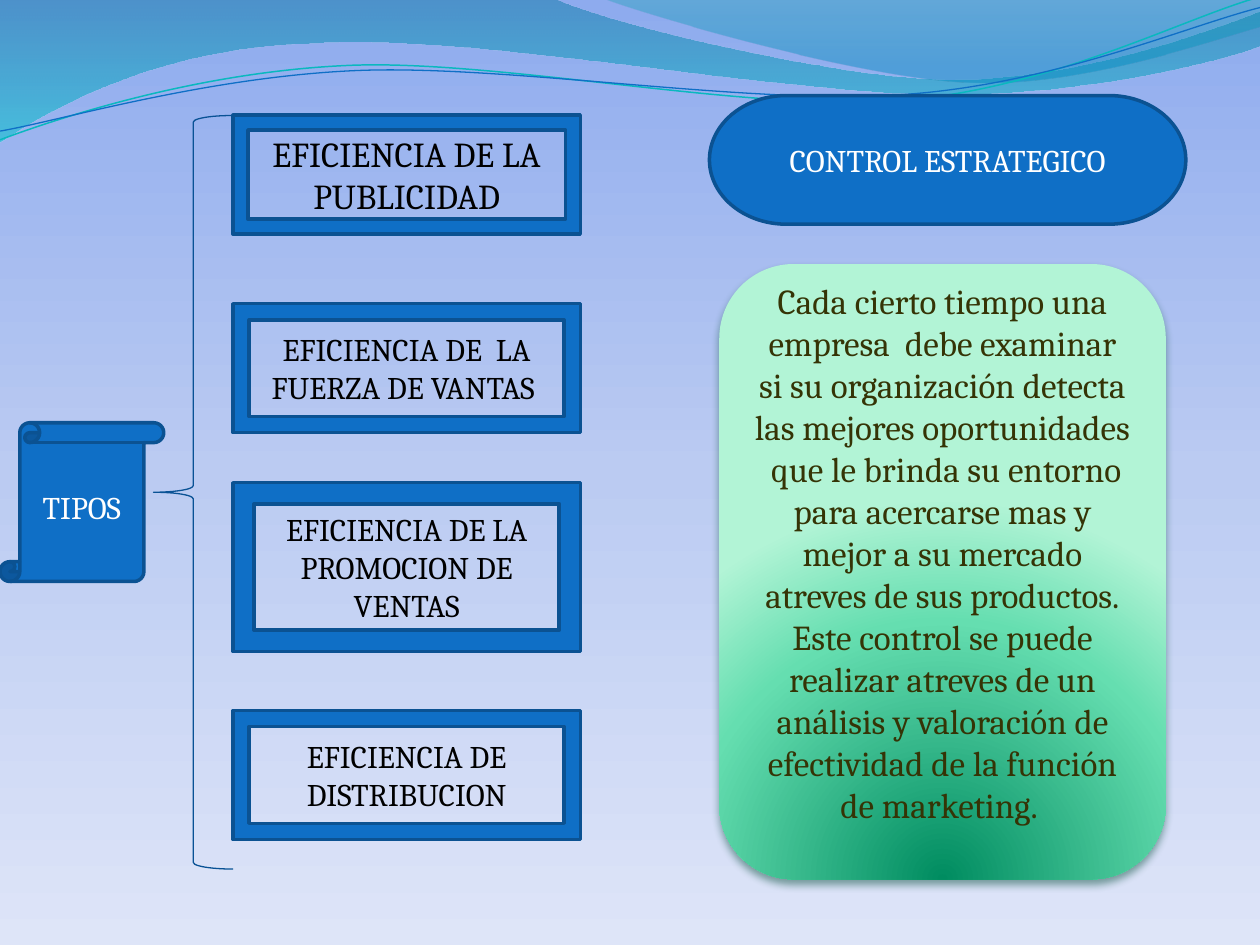
from lxml import etree
from pptx import Presentation
from pptx import util as u
from pptx.dml.color import RGBColor
from pptx.enum import shapes, text
from pptx.oxml import ns

FONT = "Cambria"
BLUE, DARK_BLUE, BLACK, WHITE, OLIVE = "0F6FC6", "0B5292", "000000", "FFFFFF", "353406"

BACKGROUND = [(0, "8EABEE", 100), (50, "BBCBF2", 100), (100, "DEE5F8", 100)]
GREEN = [(0, "008C60", 100), (68, "65DEB0", 100), (100, "B2F4D6", 100)]

WAVES = [
    ([[(0, 0)],
      [(316.8, -0.7)],
      [(342.7, 12.2), (478.1, 45.4), (545.8, 45.4)],
      [(614.2, 45.4), (689.8, 18.7), (720, 6.5)],
      [(720.7, 25.9)],
      [(707.8, 31.7), (626.4, 54.7), (537.1, 54)],
      [(446.4, 54), (275, 20.2), (185, 24.5)],
      [(92.9, 25.9), (33.1, 59.8), (-0.7, 81.4)]],
     [(0, "0074A1", 45), (100, "00C6CF", 55)]),
    ([[(344.9, -0.7)],
      [(366.5, 7.9), (491, 44.6), (553.7, 46.8)],
      [(616.3, 49.7), (691.9, 23), (720, 15.1)],
      [(720, 0)]],
     [(0, "00A1A9", 30), (80, "008BBF", 45)]),
]
WAVE_LINES = [
    ([[(0, 79.9)],
      [(34.6, 67), (113.8, 41), (199.4, 37.4)],
      [(284.4, 33.8), (427, 64.1), (513.4, 57.6)],
      [(599.8, 51.1), (675.4, 10.8), (718.6, -1.4)]], "0AB8BF", 0.85),
    ([[(0, 74.9)],
      [(33.8, 69.1), (118.1, 43.9), (203.8, 40.3)],
      [(290.2, 36.7), (429.8, 60.5), (516.2, 54)],
      [(601.9, 48.2), (677.5, 15.1), (720, 4.3)]], BLUE, 0.75),
]

FRAME_LEFT, FRAME_WIDTH = 133.2, 198.4
FRAMES = [
    ("EFICIENCIA DE LA PUBLICIDAD", 65.8, 68, 20),
    ("EFICIENCIA DE  LA FUERZA DE VANTAS ", 173.6, 73.7, 18),
    ("EFICIENCIA DE LA PROMOCION DE VENTAS", 275.8, 96.4, 18),
    ("EFICIENCIA DE DISTRIBUCION", 406, 73.7, 18),
]
LABELS = [
    ("TIPOS", shapes.MSO_SHAPE.VERTICAL_SCROLL, (0, 241.6, 93.6, 90.7)),
    ("CONTROL ESTRATEGICO", shapes.MSO_SHAPE.FLOWCHART_TERMINATOR, (405.4, 54.6, 272.2, 73.5)),
]
EXPLANATION = [
    "Cada cierto tiempo una empresa  debe examinar si su organización detecta las mejores "
    "oportunidades  que le brinda su entorno para acercarse mas y mejor a su mercado "
    "atreves de sus productos.",
    "Este control se puede realizar atreves de un análisis y valoración de efectividad "
    "de la función de marketing. ",
]


def color(value):
    return RGBColor.from_string(value)


def add_child(parent, tag, **attributes):
    return etree.SubElement(parent, ns.qn(tag), {k: str(v) for k, v in attributes.items()})


def add_color(parent, value, opacity):
    node = add_child(parent, "a:srgbClr", val=value)
    if opacity < 100:
        add_child(node, "a:alpha", val=opacity * 1000)


def set_gradient(fill, properties, stops, center=None):
    fill.solid()
    solid = properties.find(ns.qn("a:solidFill"))
    gradient = etree.Element(ns.qn("a:gradFill"), rotWithShape="1")
    stop_list = add_child(gradient, "a:gsLst")
    for position, value, opacity in stops:
        add_color(add_child(stop_list, "a:gs", pos=position * 1000), value, opacity)
    if center:
        circle = add_child(gradient, "a:path", path="circle")
        add_child(circle, "a:fillToRect", **{k: v * 1000 for k, v in center.items()})
    else:
        add_child(gradient, "a:lin", ang=90 * 60000, scaled=0)
    properties.replace(solid, gradient)


def set_line(shape, value, width):
    shape.line.color.rgb = color(value)
    shape.line.width = u.Pt(width)


def add_outline(slide, segments, close):
    segments = [[(u.Pt(x), u.Pt(y)) for x, y in segment] for segment in segments]
    corners = [segment[-1] for segment in segments]
    builder = slide.shapes.build_freeform(*corners[0])
    builder.add_line_segments(corners[1:], close=close)
    shape = builder.convert_to_shape()
    straight_parts = list(shape.element.iter(ns.qn("a:lnTo")))
    for straight, segment in zip(straight_parts, segments[1:]):
        if len(segment) == 3:
            curve = etree.Element(ns.qn("a:cubicBezTo"))
            for x, y in segment:
                add_child(curve, "a:pt", x=x - shape.left, y=y - shape.top)
            straight.getparent().replace(straight, curve)
    shape.shadow.inherit = False
    return shape


def add_box(slide, kind, box):
    shape = slide.shapes.add_shape(kind, *(u.Pt(value) for value in box))
    shape.shadow.inherit = False
    return shape


def write(shape, paragraphs, size, value):
    frame = shape.text_frame
    frame.word_wrap = True
    frame.vertical_anchor = text.MSO_ANCHOR.MIDDLE
    for index, content in enumerate(paragraphs):
        paragraph = frame.add_paragraph() if index else frame.paragraphs[0]
        paragraph.alignment = text.PP_ALIGN.CENTER
        run = paragraph.add_run()
        run.text = content
        run.font.name = FONT
        run.font.size = u.Pt(size)
        run.font.color.rgb = color(value)


def add_blue_box(slide, kind, box, content, size, value):
    shape = add_box(slide, kind, box)
    shape.fill.solid()
    shape.fill.fore_color.rgb = color(BLUE)
    set_line(shape, DARK_BLUE, 2)
    write(shape, [content], size, value)


def add_explanation(slide):
    panel = add_box(slide, shapes.MSO_SHAPE.ROUNDED_RECTANGLE, (411, 150.9, 255.2, 351.6))
    properties = panel.element.spPr
    set_gradient(panel.fill, properties, GREEN, {"l": 50, "t": 130, "r": 50, "b": -30})
    panel.line.fill.background()
    shadow = add_child(properties.find(ns.qn("a:effectLst")), "a:outerShdw",
                       blurRad=u.Pt(4.5), dist=u.Pt(3), dir=90 * 60000, rotWithShape=0)
    add_color(shadow, "044A37", 48)
    write(panel, EXPLANATION, 20, OLIVE)
    panel.text_frame.margin_bottom = u.Pt(25.8)


def main():
    presentation = Presentation()
    presentation.slide_width, presentation.slide_height = u.Pt(720), u.Pt(540)
    slide = presentation.slides.add_slide(presentation.slide_layouts[6])
    background = slide.background.fill
    background.solid()
    set_gradient(background, slide.element.find(".//" + ns.qn("p:bgPr")), BACKGROUND)

    for segments, stops in WAVES:
        wave = add_outline(slide, segments, True)
        set_gradient(wave.fill, wave.element.spPr, stops)
        wave.line.fill.background()
    for segments, value, width in WAVE_LINES:
        wave_line = add_outline(slide, segments, False)
        wave_line.fill.background()
        set_line(wave_line, value, width)

    for content, top, height, size in FRAMES:
        add_blue_box(slide, shapes.MSO_SHAPE.FRAME, (FRAME_LEFT, top, FRAME_WIDTH, height),
                     content, size, BLACK)
    brace = add_box(slide, shapes.MSO_SHAPE.LEFT_BRACE, (87.8, 66, 45.4, 430.6))
    brace.fill.background()
    set_line(brace, "095295", 0.75)
    for content, kind, box in LABELS:
        add_blue_box(slide, kind, box, content, 18, WHITE)
    add_explanation(slide)
    presentation.save("out.pptx")


if __name__ == "__main__":
    main()
